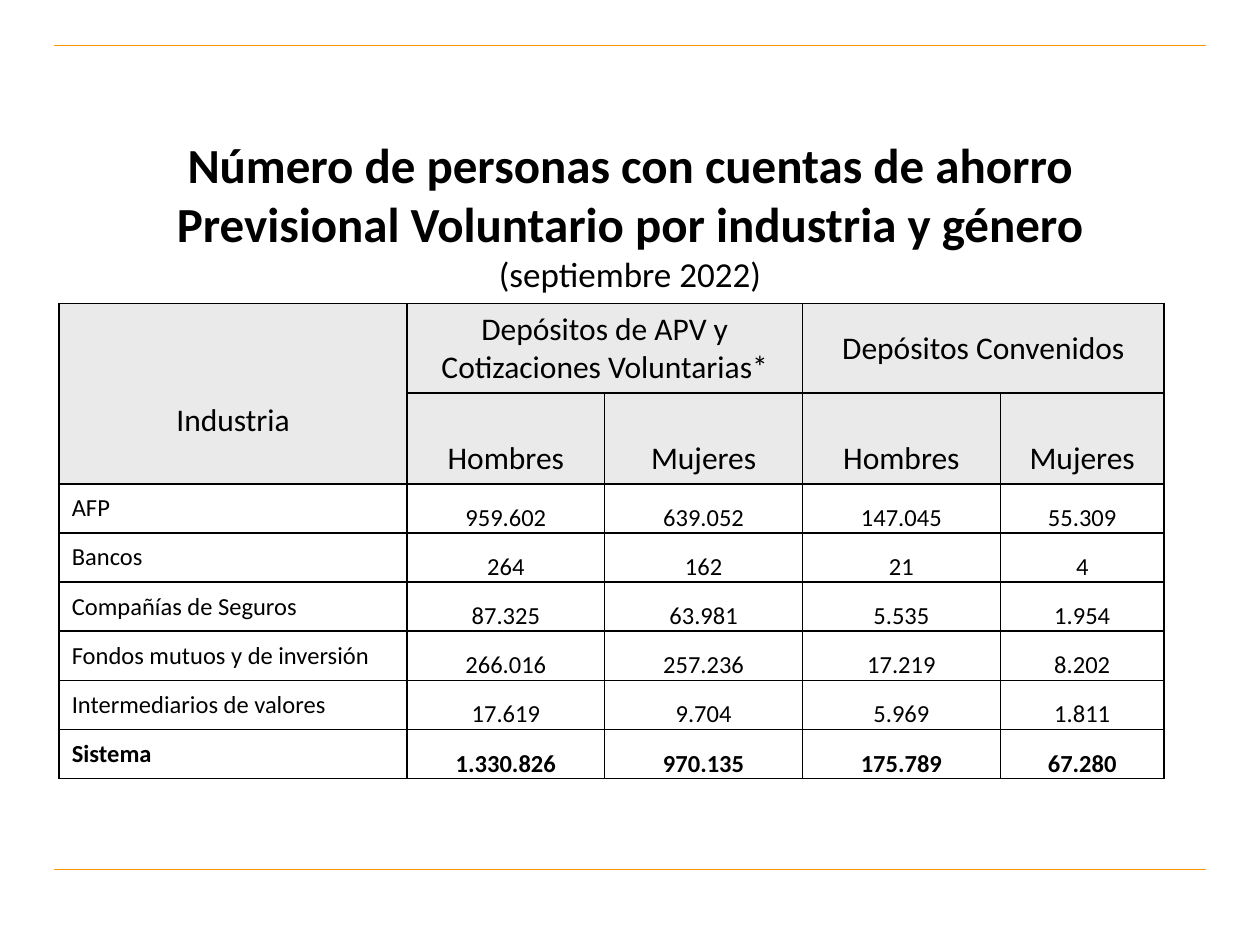
from lxml import etree
from pptx import Presentation, util as u
from pptx.dml.color import RGBColor
from pptx.enum import shapes, text
from pptx.oxml.ns import qn

BLACK = RGBColor(0, 0, 0)
WHITE = RGBColor(255, 255, 255)
GRAY = RGBColor(0xEA, 0xEA, 0xEA)
GOLD = RGBColor(0xFF, 0x99, 0)


def style(frame, size, bold=False, align=text.PP_ALIGN.CENTER):
    for para in frame.paragraphs:
        para.alignment = align
        for run in para.runs:
            font = run.font
            font.name, font.size, font.bold = "Calibri", u.Pt(size), bold
            font.color.rgb = BLACK


def border(cell):
    props = cell._tc.get_or_add_tcPr()
    for spot, side in enumerate(("lnL", "lnR", "lnT", "lnB")):
        line = etree.Element(qn("a:" + side), w=str(u.Pt(1)))
        fill = etree.SubElement(line, qn("a:solidFill"))
        etree.SubElement(fill, qn("a:srgbClr"), val=str(BLACK))
        props.insert(spot, line)


deck = Presentation()
deck.slide_width, deck.slide_height = u.Inches(10), u.Inches(7.5)
slide = deck.slides.add_slide(deck.slide_layouts[5])

for top in (0.36, 6.9):
    rule = slide.shapes.add_connector(
        shapes.MSO_CONNECTOR.STRAIGHT,
        u.Inches(0.43), u.Inches(top), u.Inches(9.57), u.Inches(top))
    rule.line.color.rgb = GOLD
    rule.line.width = u.Pt(0.75)
    etree.SubElement(rule._element.spPr, qn("a:effectLst"))

title = slide.shapes.title
title.left, title.top = u.Inches(0.5), u.Inches(1.15)
title.width, title.height = u.Inches(9), u.Inches(1.1)
frame = title.text_frame
frame.text = ("Número de personas con cuentas de ahorro Previsional Voluntario "
              "por industria y género\v(septiembre 2022)")
frame.word_wrap = True
frame.auto_size = text.MSO_AUTO_SIZE.NONE
frame.vertical_anchor = text.MSO_ANCHOR.MIDDLE
style(frame, 28, True)
date = frame.paragraphs[0].runs[-1].font
date.size, date.bold = u.Pt(20), False

rows = [
    ["Industria", "Depósitos de APV y Cotizaciones Voluntarias*", "",
     "Depósitos Convenidos", ""],
    ["", "Hombres", "Mujeres", "Hombres", "Mujeres"],
    ["AFP", "959.602", "639.052", "147.045", "55.309"],
    ["Bancos", "264", "162", "21", "4"],
    ["Compañías de Seguros", "87.325", "63.981", "5.535", "1.954"],
    ["Fondos mutuos y de inversión", "266.016", "257.236", "17.219", "8.202"],
    ["Intermediarios de valores", "17.619", "9.704", "5.969", "1.811"],
    ["Sistema", "1.330.826", "970.135", "175.789", "67.280"],
]
wides = [2.76, 1.57, 1.57, 1.57, 1.3]
talls = [0.71, 0.72] + [0.39] * 6
table = slide.shapes.add_table(
    len(rows), len(wides), u.Inches(0.47), u.Inches(2.41),
    u.Inches(sum(wides)), u.Inches(sum(talls))).table
for col, wide in zip(table.columns, wides):
    col.width = u.Inches(wide)
for row, tall in zip(table.rows, talls):
    row.height = u.Inches(tall)

for r, row in enumerate(rows):
    for c, word in enumerate(row):
        cell = table.cell(r, c)
        head, name = r < 2, c == 0
        cell.text = word
        cell.fill.solid()
        cell.fill.fore_color.rgb = GRAY if head else WHITE
        middle = (r == 0 and c > 0) or (name and not head)
        cell.vertical_anchor = (text.MSO_ANCHOR.MIDDLE if middle
                                else text.MSO_ANCHOR.BOTTOM)
        if not head and not name:
            cell.margin_left = cell.margin_right = cell.margin_top = u.Inches(0.01)
            cell.margin_bottom = 0
        left = name and not head
        style(cell.text_frame, 18 if head else 14, r == len(rows) - 1,
              text.PP_ALIGN.LEFT if left else text.PP_ALIGN.CENTER)
        border(cell)

table.cell(0, 0).margin_bottom = u.Inches(0.35)
table.cell(0, 0).merge(table.cell(1, 0))
for c in (1, 3):
    table.cell(0, c).merge(table.cell(0, c + 1))

deck.save("out.pptx")
